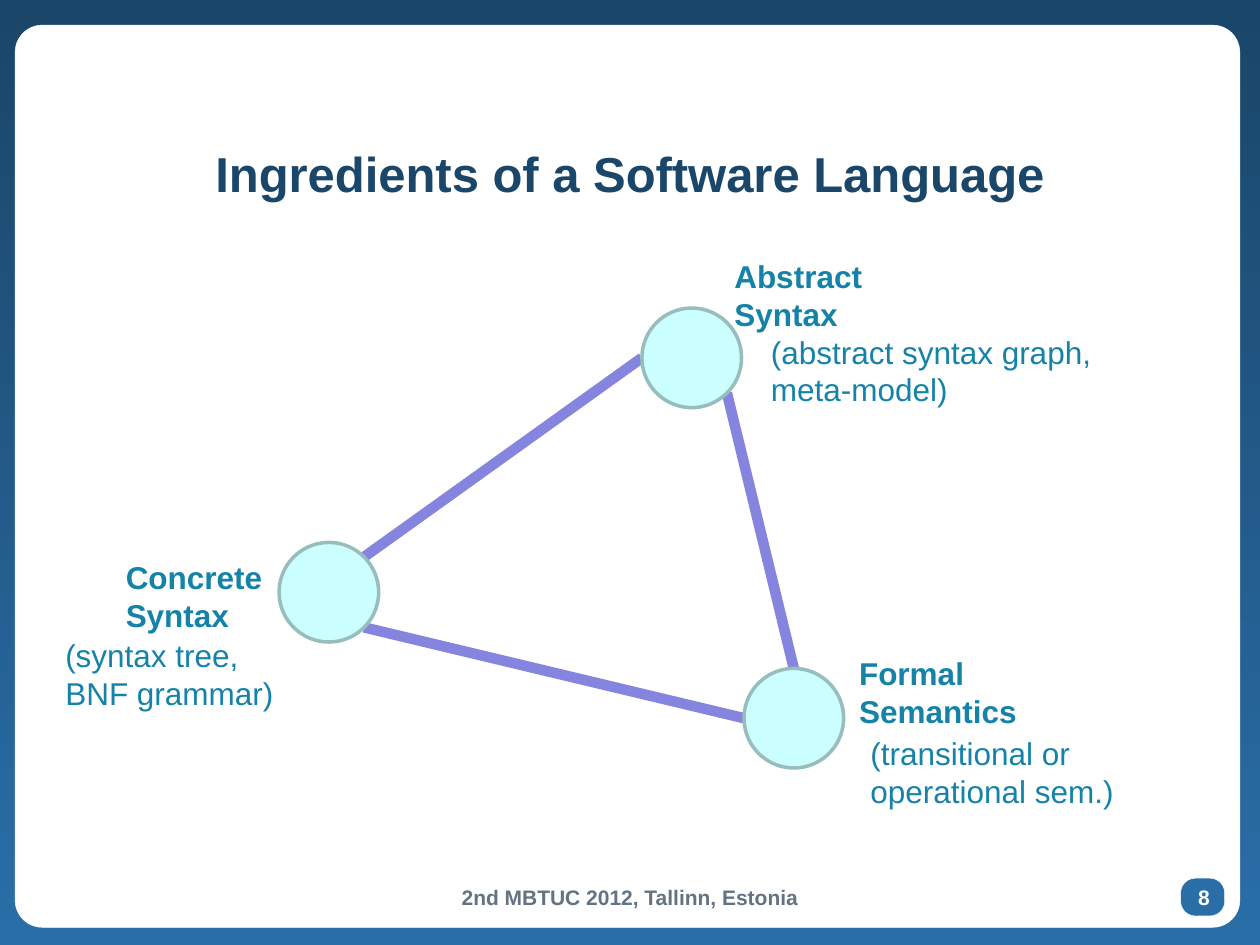
"""Build a slide on the ingredients of a software language."""
import math

import pptx
import pptx.dml.color
import pptx.enum.shapes
import pptx.enum.text
import pptx.oxml
import pptx.oxml.ns
import pptx.util

RGB = pptx.dml.color.RGBColor.from_string
SHAPE = pptx.enum.shapes.MSO_SHAPE
ALIGN = pptx.enum.text.PP_ALIGN
ANCHOR = pptx.enum.text.MSO_ANCHOR
AUTO = pptx.enum.text.MSO_AUTO_SIZE
COLORS = {
    "navy": "1A4669", "blue": "2A6EA8", "white": "FFFFFF", "grey": "637381",
    "teal": "1582A8", "edge": "8585E0", "node": "CCFFFF", "rim": "97BDBD",
}

prs = pptx.Presentation()
prs.slide_width, prs.slide_height = pptx.util.Inches(10), pptx.util.Inches(7.5)
COL, ROW = prs.slide_width / 100, prs.slide_height / 75
s = prs.slides.add_slide(prs.slide_layouts[6])


def grid(*cells):
    """Turn alternating columns and rows into slide lengths."""
    return [round(n * (ROW if i % 2 else COL)) for i, n in enumerate(cells)]


def text(content, box, size=18, color="teal", bold=False, align=ALIGN.LEFT,
         anchor=ANCHOR.TOP, wrap=False, auto=AUTO.SHAPE_TO_FIT_TEXT):
    """Add a text box with one paragraph per line of content."""
    tf = s.shapes.add_textbox(*grid(*box)).text_frame
    tf.word_wrap, tf.auto_size, tf.vertical_anchor = wrap, auto, anchor
    tf.text = content
    for p in tf.paragraphs:
        p.alignment = align
        for r in p.runs:
            r.font.name, r.font.bold = "Arial", bold
            r.font.size = pptx.util.Pt(size)
            r.font.color.rgb = RGB(COLORS[color])


fill = s.background.fill
fill.gradient()
fill.gradient_angle = 270
for stop, position, color in zip(fill.gradient_stops, (0, 1), ("navy", "blue")):
    stop.position = position
    stop.color.rgb = RGB(COLORS[color])

for box, radius, color in [
    ((1.2, 2, 97.2, 71.6), 0.03, "white"),
    ((93.7, 69.7, 3.5, 3), 0.39, "blue"),
]:
    sp = s.shapes.add_shape(SHAPE.ROUNDED_RECTANGLE, *grid(*box))
    sp.shadow.inherit = False
    sp.adjustments[0] = radius
    sp.fill.solid()
    sp.fill.fore_color.rgb = RGB(COLORS[color])
    sp.line.color.rgb = RGB(COLORS["white"])
    sp.line.width = pptx.util.Pt(0.25)

fixed = {"bold": True, "align": ALIGN.CENTER, "wrap": True, "auto": AUTO.NONE}
text("Ingredients of a Software Language", (3.5, 10.4, 93, 6.7),
     size=28, color="navy", anchor=ANCHOR.MIDDLE, **fixed)
text("2nd MBTUC 2012, Tallinn, Estonia", (19.9, 69.7, 60.2, 3.2),
     size=12, color="grey", **fixed)
text("8", (93, 69.7, 5.1, 2.7), size=12, color="white", **fixed)

RADIUS = 3.95
nodes = {"concrete": (26.1, 47), "abstract": (54.9, 28.4), "formal": (63, 57)}
edges = [
    ("concrete", -45, "abstract", 180),
    ("formal", -90, "abstract", 45),
    ("concrete", 45, "formal", 180),
]
for start, start_angle, end, end_angle in edges:
    ends = []
    for name, angle in ((start, start_angle), (end, end_angle)):
        x, y = nodes[name]
        a = math.radians(angle)
        ends += [x + RADIUS * math.cos(a), y + RADIUS * math.sin(a)]
    line = s.shapes.add_connector(
        pptx.enum.shapes.MSO_CONNECTOR.STRAIGHT, *grid(*ends))
    line.line.color.rgb = RGB(COLORS["edge"])
    line.line.width = pptx.util.Pt(6)
    spPr = line._element.spPr
    spPr.append(pptx.oxml.parse_xml(
        f'<a:effectLst {pptx.oxml.ns.nsdecls("a")}/>'))

for x, y in nodes.values():
    sp = s.shapes.add_shape(
        SHAPE.OVAL, *grid(x - RADIUS, y - RADIUS, 2 * RADIUS, 2 * RADIUS))
    sp.shadow.inherit = False
    sp.fill.solid()
    sp.fill.fore_color.rgb = RGB(COLORS["node"])
    sp.line.color.rgb = RGB(COLORS["rim"])
    sp.line.width = pptx.util.Pt(2)

for content, x, y, width, bold in [
    ("Concrete\nSyntax", 9, 43.8, 13, True),
    ("(syntax tree,\vBNF grammar)", 4.2, 50, 18.7, False),
    ("Abstract\nSyntax", 57.3, 19.9, 12.3, True),
    ("(abstract syntax graph,\nmeta-model)", 60.2, 25.9, 27.7, False),
    ("Formal\nSemantics", 67.2, 51.4, 14.7, True),
    ("(transitional or\noperational sem.)", 68.1, 57.8, 21.5, False),
]:
    text(content, (x, y, width, 7.1), bold=bold)

prs.save("out.pptx")
